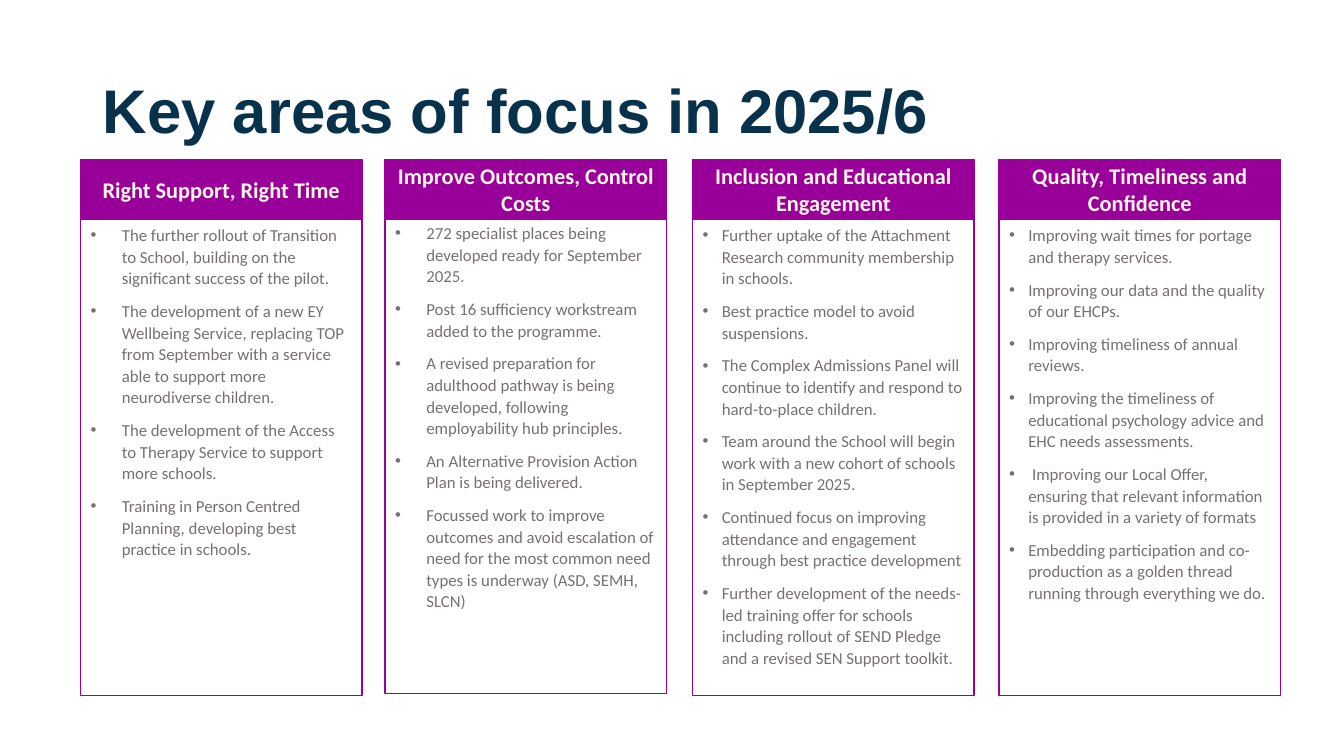
from lxml.etree import SubElement
from pptx import Presentation
from pptx.dml.color import RGBColor
from pptx.enum.shapes import MSO_SHAPE as Shape
from pptx.enum.text import MSO_ANCHOR as Anchor, MSO_AUTO_SIZE as AutoSize, PP_ALIGN as Align
from pptx.oxml.ns import qn
from pptx.util import Inches, Pt

PURPLE, CREAM, GREY, NAVY = "990099", "FFF5E9", "767171", "08314C"
COLUMN_WIDTH, HEADING_HEIGHT, ACTIONS_HEIGHT = 2.79, 0.6, 4.73

FOCUS_AREAS = [
    (0.8, 2.17, 0.31, "Right Support, Right Time", [
        "The further rollout of Transition to School, building on the significant success of the pilot.",
        "The development of a new EY Wellbeing Service, replacing TOP from September with a service "
        "able to support more neurodiverse children.",
        "The development of the Access to Therapy Service to support more schools.",
        "Training in Person Centred Planning, developing best practice in schools.",
    ]),
    (3.82, 2.15, 0.31, "Improve Outcomes, Control Costs", [
        "272 specialist places being developed ready for September 2025.",
        "Post 16 sufficiency workstream added to the programme.",
        "A revised preparation for adulthood pathway is being developed, following employability "
        "hub principles.",
        "An Alternative Provision Action Plan is being delivered.",
        "Focussed work to improve outcomes and avoid escalation of need for the most common need "
        "types is underway (ASD, SEMH, SLCN)",
    ]),
    (6.87, 2.17, 0.19, "Inclusion and Educational Engagement", [
        "Further uptake of the Attachment Research community membership in schools.",
        "Best practice model to avoid suspensions.",
        "The Complex Admissions Panel will continue to identify and respond to hard-to-place children.",
        "Team around the School will begin work with a new cohort of schools in September 2025.",
        "Continued focus on improving attendance and engagement through best practice development",
        "Further development of the needs-led training offer for schools including rollout of SEND "
        "Pledge and a revised SEN Support toolkit.",
    ]),
    (9.91, 2.17, 0.19, "Quality, Timeliness and Confidence", [
        "Improving wait times for portage and therapy services.",
        "Improving our data and the quality of our EHCPs.",
        "Improving timeliness of annual reviews.",
        "Improving the timeliness of educational psychology advice and EHC needs assessments.",
        " Improving our Local Offer, ensuring that relevant information is provided in a variety of formats",
        "Embedding participation and co-production as a golden thread running through everything we do.",
    ]),
]


def color(hex_code):
    return RGBColor.from_string(hex_code)


def set_font(paragraph, name, size, hex_code, bold=False):
    font = paragraph.font
    font.name, font.size, font.bold = name, Pt(size), bold
    font.color.rgb = color(hex_code)


def add_bullet(paragraph, indent):
    properties = paragraph._p.get_or_add_pPr()
    properties.set("marL", str(Inches(indent)))
    properties.set("indent", str(-Inches(indent)))
    SubElement(properties, qn("a:buFont"), typeface="Arial")
    SubElement(properties, qn("a:buChar"), char="•")


def add_panel(slide, left, top, width, height, anchor):
    panel = slide.shapes.add_shape(
        Shape.RECTANGLE, Inches(left), Inches(top), Inches(width), Inches(height))
    panel.shadow.inherit = False
    panel.fill.background()
    panel.line.color.rgb = color(PURPLE)
    panel.line.width = Pt(1)
    panel.text_frame.word_wrap = True
    panel.text_frame.vertical_anchor = anchor
    return panel


def add_title(slide, left, top, width, height):
    title = slide.shapes.title
    title.left, title.top = Inches(left), Inches(top)
    title.width, title.height = Inches(width), Inches(height)
    frame = title.text_frame
    frame.text = "Key areas of focus in 2025/6"
    frame.auto_size = AutoSize.NONE
    frame.vertical_anchor = Anchor.MIDDLE
    paragraph = frame.paragraphs[0]
    paragraph.alignment = Align.LEFT
    paragraph.line_spacing = 0.9
    set_font(paragraph, "Arial", 44, NAVY, bold=True)


def add_actions(slide, left, top, width, height, indent, actions):
    frame = add_panel(slide, left, top, width, height, Anchor.TOP).text_frame
    for index, action in enumerate(actions):
        paragraph = frame.add_paragraph() if index else frame.paragraphs[0]
        paragraph.text = action
        paragraph.alignment = Align.LEFT
        paragraph.line_spacing = 1.07
        paragraph.space_after = Pt(8)
        add_bullet(paragraph, indent)
        set_font(paragraph, "Calibri", 12, GREY)


def add_heading(slide, left, top, width, height, heading):
    banner = add_panel(slide, left, top, width, height, Anchor.MIDDLE)
    banner.fill.solid()
    banner.fill.fore_color.rgb = color(PURPLE)
    paragraph = banner.text_frame.paragraphs[0]
    paragraph.text = heading
    paragraph.alignment = Align.CENTER
    set_font(paragraph, "Calibri", 16, CREAM, bold=True)


def add_focus_area(slide, left, actions_top, indent, heading, actions):
    add_actions(slide, left, actions_top, COLUMN_WIDTH, ACTIONS_HEIGHT, indent, actions)
    add_heading(slide, left, 1.58, COLUMN_WIDTH, HEADING_HEIGHT, heading)


def main():
    deck = Presentation()
    deck.slide_width, deck.slide_height = Inches(13.33), Inches(7.5)
    slide = deck.slides.add_slide(deck.slide_layouts.get_by_name("Title Only"))
    add_title(slide, 0.92, 0.4, 11.5, 1.45)
    for focus_area in FOCUS_AREAS:
        add_focus_area(slide, *focus_area)
    deck.save("out.pptx")


if __name__ == "__main__":
    main()
